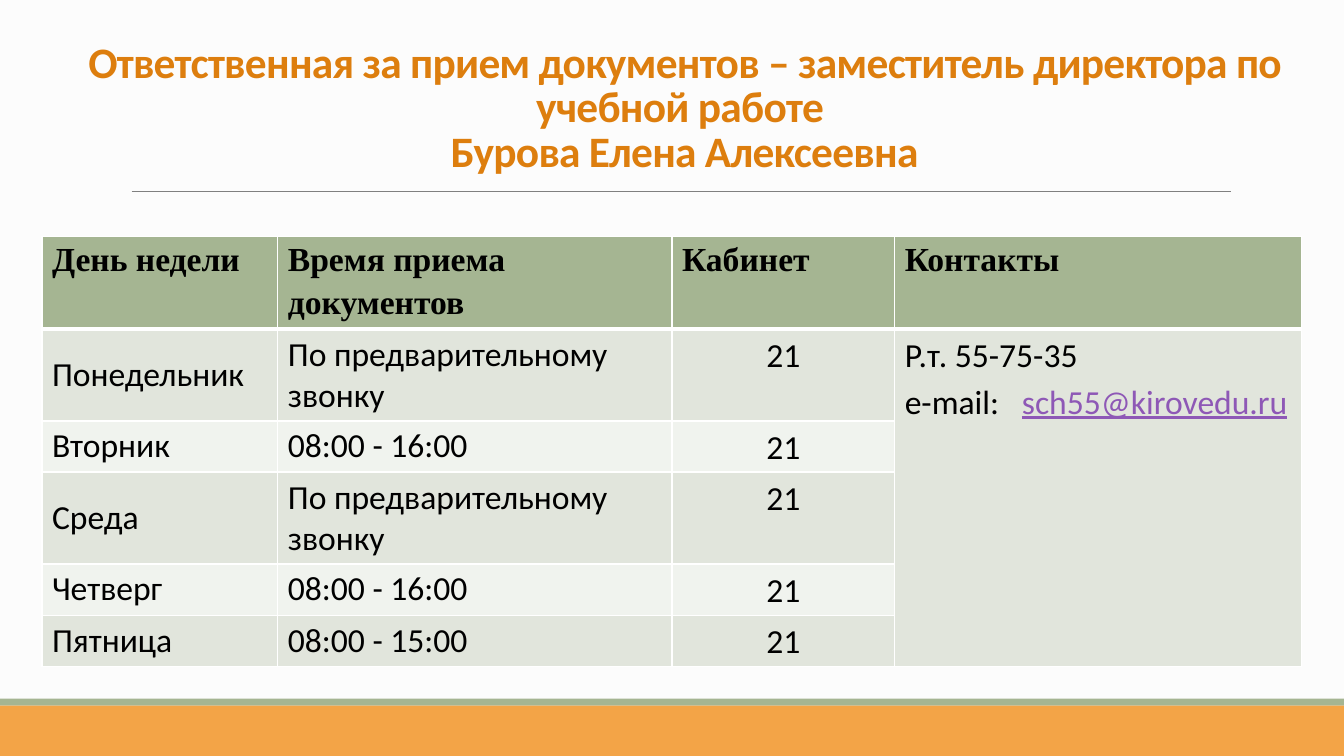
from lxml import etree
from pptx import Presentation
from pptx.dml.color import RGBColor
from pptx.enum.shapes import MSO_CONNECTOR, MSO_SHAPE
from pptx.enum.text import MSO_ANCHOR, PP_ALIGN
from pptx.oxml.ns import qn
from pptx.util import Pt

RECT, STRAIGHT = MSO_SHAPE.RECTANGLE, MSO_CONNECTOR.STRAIGHT
TOP, MIDDLE, BOTTOM = MSO_ANCHOR.TOP, MSO_ANCHOR.MIDDLE, MSO_ANCHOR.BOTTOM
LEFT, CENTER = PP_ALIGN.LEFT, PP_ALIGN.CENTER

BACKGROUND = RGBColor(0xFC, 0xFC, 0xFC)
ORANGE = RGBColor(0xF3, 0xA4, 0x47)
DARK_ORANGE = RGBColor(0xDD, 0x7E, 0x0E)
GREEN = RGBColor(0xA5, 0xB5, 0x92)
BAND_DARK = RGBColor(0xE1, 0xE5, 0xDC)
BAND_LIGHT = RGBColor(0xF0, 0xF3, 0xEE)
GRAY = RGBColor(0x80, 0x80, 0x80)
BLACK = RGBColor(0, 0, 0)
WHITE = RGBColor(0xFF, 0xFF, 0xFF)
PURPLE = RGBColor(0x8E, 0x58, 0xB6)

SANS, SERIF = "Calibri", "Times New Roman"
WIDTH, HEIGHT = 960, 540

TITLE = ("Ответственная за прием документов – заместитель директора "
         "по учебной работе \vБурова Елена Алексеевна")
HEADINGS = ["День недели", "Время приема документов", "Кабинет", "Контакты"]
BY_CALL = "По предварительному звонку"
SCHEDULE = [
    ("Понедельник", BY_CALL, "21"),
    ("Вторник", "08:00 - 16:00", "21"),
    ("Среда", BY_CALL, "21"),
    ("Четверг", "08:00 - 16:00", "21"),
    ("Пятница", "08:00 - 15:00", "21"),
]
PHONE, EMAIL_LABEL, EMAIL = "Р.т. 55-75-35", "e-mail:   ", "sch55@kirovedu.ru"

COLUMN_SHARES = [2.34, 3.91, 2.21, 4.04]
HEADER_HEIGHT, ONE_LINE, TWO_LINES = 60.5, 36.5, 65.7


def style_font(font, size, color, name=SANS, bold=False):
    font.size, font.name, font.bold = Pt(size), name, bold
    font.color.rgb = color


def add_footer(slide, left, top, width, height):
    """Green strip above an orange band."""
    strip = 5
    bands = [(top, strip, GREEN), (top + strip, height - strip, ORANGE)]
    for y, h, color in bands:
        sp = slide.shapes.add_shape(RECT, Pt(left), Pt(y), Pt(width), Pt(h))
        sp.shadow.inherit = False
        sp.fill.solid()
        sp.fill.fore_color.rgb = color
        sp.line.fill.background()


def add_title(slide, left, top, width, height):
    """Bottom-anchored heading with a thin rule below it."""
    box = slide.shapes.add_textbox(Pt(left), Pt(top), Pt(width), Pt(height))
    tf = box.text_frame
    tf.word_wrap = True
    tf.vertical_anchor = BOTTOM
    tf.text = TITLE
    p = tf.paragraphs[0]
    p.alignment, p.line_spacing = CENTER, 0.85
    for r in p.runs:
        style_font(r.font, 31, DARK_ORANGE, bold=True)
        r._r.get_or_add_rPr().set("spc", "-50")

    y, inset = top + height + 7.6, 46
    rule = slide.shapes.add_connector(
        STRAIGHT, Pt(left + inset), Pt(y), Pt(left + width - 51), Pt(y))
    rule.line.color.rgb, rule.line.width = GRAY, Pt(0.5)
    etree.SubElement(rule._element.spPr, qn("a:effectLst"))


def set_borders(cell, **widths):
    tc_pr = cell._tc.get_or_add_tcPr()
    for side in "LRTB":
        ln = etree.SubElement(tc_pr, qn(f"a:ln{side}"),
                              w=str(Pt(widths.get(side, 1))))
        fill = etree.SubElement(ln, qn("a:solidFill"))
        etree.SubElement(fill, qn("a:srgbClr"), val=str(WHITE))


def fill_cell(cell, text, color, font=SANS, bold=False, anchor=TOP,
              align=LEFT, spacing=1.15, side=7.2, edge=0):
    cell.fill.solid()
    cell.fill.fore_color.rgb = color
    cell.vertical_anchor = anchor
    cell.margin_left = cell.margin_right = Pt(side)
    cell.margin_top = cell.margin_bottom = Pt(edge)
    cell.text_frame.text = text
    for p in cell.text_frame.paragraphs:
        p.alignment, p.line_spacing = align, spacing
        for r in p.runs:
            style_font(r.font, 24, BLACK, font, bold)


def add_schedule(slide, left, top, width):
    heights = [HEADER_HEIGHT] + [
        TWO_LINES if time == BY_CALL else ONE_LINE for _, time, _ in SCHEDULE]
    frame = slide.shapes.add_table(len(heights), len(HEADINGS), Pt(left),
                                   Pt(top), Pt(width), Pt(sum(heights)))
    table = frame.table
    for column, share in zip(table.columns, COLUMN_SHARES):
        column.width = Pt(width * share / sum(COLUMN_SHARES))
    for row, h in zip(table.rows, heights):
        row.height = Pt(h)

    # Borders: thicker line under the header
    for i in range(len(heights)):
        for j in range(len(HEADINGS)):
            set_borders(table.cell(i, j), T=3 if i == 1 else 1,
                        B=3 if i == 0 else 1)

    # Header row
    for j, heading in enumerate(HEADINGS):
        fill_cell(table.cell(0, j), heading, GREEN, SERIF, True)

    # Days, hours and rooms
    for i, (day, time, room) in enumerate(SCHEDULE, 1):
        color = BAND_DARK if i % 2 else BAND_LIGHT
        for j, text in enumerate((day, time)):
            fill_cell(table.cell(i, j), text, color, anchor=MIDDLE,
                      spacing=1.0, edge=3.6)
        fill_cell(table.cell(i, 2), room, color, align=CENTER, side=5)

    # Contacts span all days
    contacts = table.cell(1, 3)
    contacts.merge(table.cell(len(SCHEDULE), 3))
    fill_cell(contacts, f"{PHONE}\n{EMAIL_LABEL}", BAND_DARK)
    r = contacts.text_frame.paragraphs[1].add_run()
    r.text = EMAIL
    style_font(r.font, 24, PURPLE)
    r.font.underline = True


def main():
    prs = Presentation()
    prs.slide_width, prs.slide_height = Pt(WIDTH), Pt(HEIGHT)
    slide = prs.slides.add_slide(prs.slide_layouts[6])
    slide.background.fill.solid()
    slide.background.fill.fore_color.rgb = BACKGROUND
    add_footer(slide, 0, HEIGHT - 41, WIDTH, 41)
    add_title(slide, 48, 21.6, 882, 107.6)
    add_schedule(slide, 30, 168.8, 900)
    prs.save("out.pptx")


if __name__ == "__main__":
    main()
